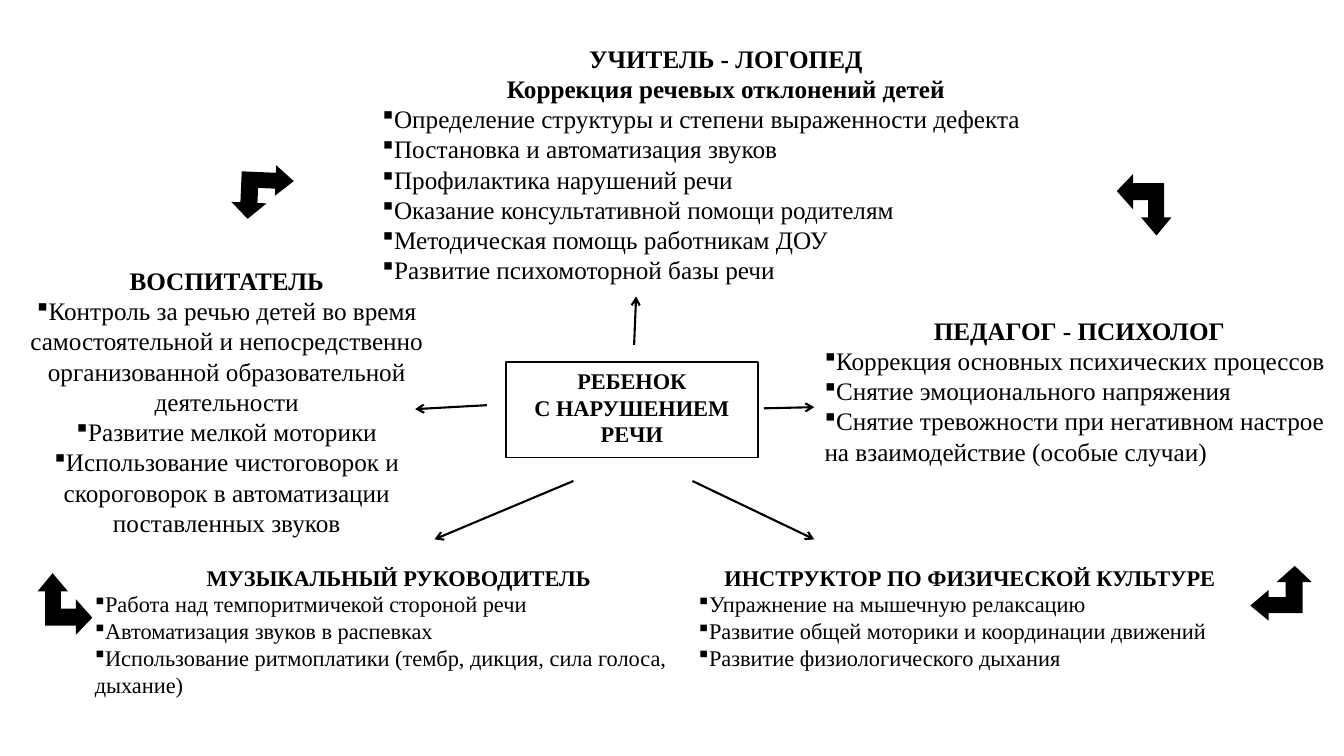
from dataclasses import dataclass

from lxml.etree import SubElement
from pptx import Presentation
from pptx.dml.color import RGBColor
from pptx.enum.shapes import MSO_CONNECTOR, MSO_SHAPE
from pptx.enum.text import MSO_ANCHOR as Anchor, PP_ALIGN as Align
from pptx.oxml.ns import qn
from pptx.slide import Slide
from pptx.util import Cm, Pt


@dataclass(frozen=True)
class Theme:
    font: str = "Times New Roman"
    ink: RGBColor = RGBColor(0, 0, 0)
    paper: RGBColor = RGBColor(255, 255, 255)
    frame: RGBColor = RGBColor(0x0C, 0x04, 0x04)
    large: int = 18
    small: int = 16
    frame_width: float = 1
    arrow_width: float = 1.5
    bullet_font: str = "Wingdings"
    bullet: str = "§"  # a small square in Wingdings


THEME = Theme()


@dataclass(frozen=True)
class Block:
    """A role with centred bold headings and bulleted duties, in cm."""
    left: float
    top: float
    width: float
    height: float
    size: int
    headings: tuple[str, ...]
    duties: tuple[str, ...] = ()
    duty_align: Align = Align.LEFT
    filled: bool = False
    framed: bool = False


@dataclass(frozen=True)
class CornerArrow:
    left: float
    top: float
    rotation: float


@dataclass(frozen=True)
class Ray:
    start: tuple[float, float]
    end: tuple[float, float]


BLOCKS = (
    Block(9.39, 0.96, 17.81, 4.78, THEME.large,
          ("УЧИТЕЛЬ - ЛОГОПЕД", "Коррекция речевых отклонений детей"),
          ("Определение структуры и степени выраженности дефекта",
           "Постановка и автоматизация звуков",
           "Профилактика нарушений речи",
           "Оказание консультативной помощи родителям",
           "Методическая помощь работникам ДОУ",
           "Развитие психомоторной базы речи")),
    Block(0, 6.56, 11.43, 5.28, THEME.large,
          ("ВОСПИТАТЕЛЬ",),
          ("Контроль за речью детей во время самостоятельной и непосредственно "
           "организованной образовательной деятельности",
           "Развитие мелкой моторики",
           "Использование чистоговорок и скороговорок в автоматизации "
           "поставленных звуков"),
          duty_align=Align.CENTER),
    Block(20.53, 7.81, 13.34, 4.9, THEME.large,
          ("ПЕДАГОГ - ПСИХОЛОГ",),
          ("Коррекция основных психических процессов",
           "Снятие эмоционального напряжения",
           "Снятие тревожности при негативном настрое на взаимодействие "
           "(особые случаи)"),
          filled=True),
    Block(12.75, 9.12, 6.35, 2.41, THEME.small,
          ("РЕБЕНОК", "С НАРУШЕНИЕМ\nРЕЧИ"), filled=True, framed=True),
    Block(2.14, 14.08, 15.82, 3.73, THEME.small,
          ("МУЗЫКАЛЬНЫЙ РУКОВОДИТЕЛЬ",),
          ("Работа над темпоритмичекой стороной речи",
           "Автоматизация звуков в распевках",
           "Использование ритмоплатики (тембр, дикция, сила голоса, дыхание)")),
    Block(17.36, 14.08, 14.17, 3.07, THEME.small,
          ("ИНСТРУКТОР ПО ФИЗИЧЕСКОЙ КУЛЬТУРЕ",),
          ("Упражнение на мышечную релаксацию",
           "Развитие общей моторики и координации движений",
           "Развитие физиологического дыхания")),
)

# Two-headed corner arrow pointing up and left
CORNER_OUTLINE = (
    (1.12, 0), (0.66, 0.41), (0.89, 0.41), (0.89, 0.79), (0.46, 0.79),
    (0.46, 0.61), (0, 1), (0.46, 1.38), (0.46, 1.19), (1.32, 1.19),
    (1.32, 0.41), (1.55, 0.41),
)

CORNER_ARROWS = (
    CornerArrow(0.86, 14.53, 90),
    CornerArrow(5.84, 4.15, 182.5),
    CornerArrow(31.51, 14.26, 0),
    CornerArrow(28.06, 4.47, 270),
)

RAYS = (
    Ray((15.98, 8.69), (16.03, 7.47)),
    Ray((17.45, 12.12), (20.52, 13.59)),
    Ray((14.45, 12.12), (10.95, 13.59)),
    Ray((12.27, 10.21), (10.46, 10.31)),
    Ray((19.25, 10.29), (20.52, 10.26)),
)


def add_bullet(para) -> None:
    props = para._p.get_or_add_pPr()
    props.set("marL", "0")
    props.set("indent", "0")
    SubElement(props, qn("a:buFont"), typeface=THEME.bullet_font,
               pitchFamily="2", charset="2")
    SubElement(props, qn("a:buChar"), char=THEME.bullet)


def add_run(para, text: str, size: int, bold: bool) -> None:
    span = para.add_run()
    span.text = text
    span.font.name = THEME.font
    span.font.size = Pt(size)
    span.font.bold = bold
    span.font.color.rgb = THEME.ink


def draw_block(page: Slide, block: Block) -> None:
    place = [Cm(v) for v in (block.left, block.top, block.width, block.height)]
    if block.filled:
        box = page.shapes.add_shape(MSO_SHAPE.RECTANGLE, *place)
        box.shadow.inherit = False
        box.fill.solid()
        box.fill.fore_color.rgb = THEME.paper
        if block.framed:
            box.line.color.rgb = THEME.frame
            box.line.width = Pt(THEME.frame_width)
        else:
            box.line.fill.background()
    else:
        box = page.shapes.add_textbox(*place)
    frame = box.text_frame
    frame.word_wrap = True
    frame.vertical_anchor = Anchor.TOP

    for index, text in enumerate(block.headings + block.duties):
        is_heading = index < len(block.headings)
        para = frame.add_paragraph() if index else frame.paragraphs[0]
        para.alignment = Align.CENTER if is_heading else block.duty_align
        if not is_heading:
            add_bullet(para)
        for number, line in enumerate(text.split("\n")):
            if number:
                para.add_line_break()
            add_run(para, line, block.size, is_heading)


def draw_corner_arrow(page: Slide, arrow: CornerArrow) -> None:
    first, *rest = [(Cm(arrow.left + x), Cm(arrow.top + y))
                    for x, y in CORNER_OUTLINE]
    builder = page.shapes.build_freeform(*first)
    builder.add_line_segments(rest, close=True)
    shape = builder.convert_to_shape()
    shape.rotation = arrow.rotation
    shape.shadow.inherit = False
    shape.fill.solid()
    shape.fill.fore_color.rgb = THEME.ink
    shape.line.fill.background()


def draw_ray(page: Slide, ray: Ray) -> None:
    ends = [Cm(v) for v in ray.start + ray.end]
    line = page.shapes.add_connector(MSO_CONNECTOR.STRAIGHT, *ends)
    line.line.color.rgb = THEME.ink
    line.line.width = Pt(THEME.arrow_width)
    SubElement(line.line._get_or_add_ln(), qn("a:tailEnd"), type="arrow")
    SubElement(line._element.spPr, qn("a:effectLst"))


def main() -> None:
    deck = Presentation()
    deck.slide_width, deck.slide_height = Cm(33.87), Cm(19.05)
    page = deck.slides.add_slide(deck.slide_layouts[6])

    # Roles around the child
    for block in BLOCKS:
        draw_block(page, block)
    # Links between the roles
    for arrow in CORNER_ARROWS:
        draw_corner_arrow(page, arrow)
    # Rays from the child to each role
    for ray in RAYS:
        draw_ray(page, ray)

    deck.save("out.pptx")


if __name__ == "__main__":
    main()
